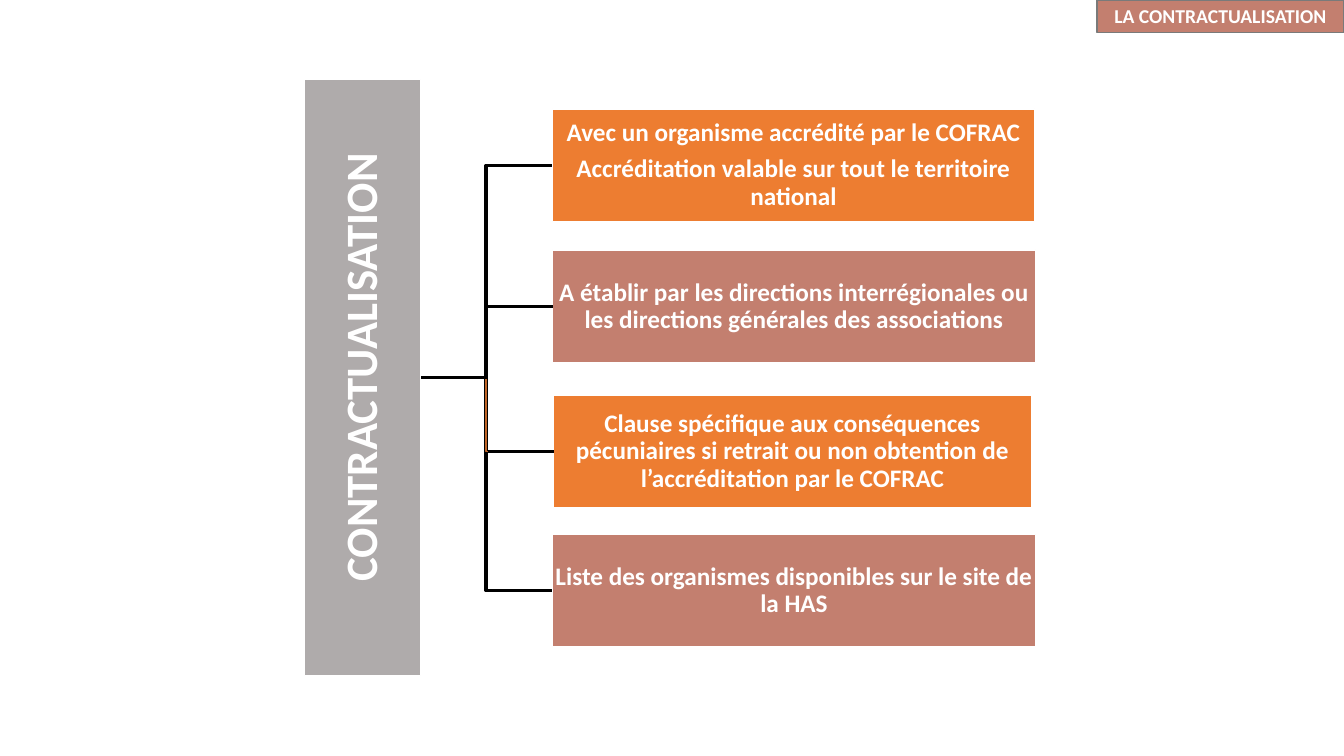
from dataclasses import dataclass

from lxml import etree
from pptx import Presentation
from pptx import util as u
from pptx.dml.color import RGBColor
from pptx.enum import shapes, text
from pptx.oxml.ns import qn


@dataclass(frozen=True)
class Theme:
    font: str = "Calibri"
    white: str = "FFFFFF"
    black: str = "000000"
    grey: str = "AFABAB"
    orange: str = "ED7D31"
    rust: str = "BE6427"
    rose: str = "C37F6F"
    border: str = "7A7A7A"
    tag_size: int = 14
    clause_size: int = 18
    stem_size: int = 32
    thin: float = 1
    thick: float = 2.25


THEME = Theme()
STEM_BOX = (3.02, 0.79, 1.15, 5.91)
TAG_BOX = (10.88, 0, 2.45, 0.32)
CLAUSE_HEIGHT = 1.12
FORK_X = 4.82

# left, top, width, fill, branch colour, branch weight, paragraphs
CLAUSES = [
    (5.48, 1.08, 4.78, THEME.orange, THEME.black, THEME.thick,
     ["Avec un organisme accrédité par le COFRAC",
      "Accréditation valable sur tout le territoire national"]),
    (5.48, 2.48, 4.79, THEME.rose, THEME.rust, THEME.thin,
     ["A établir par les directions interrégionales ou les directions "
      "générales des associations"]),
    (5.49, 3.92, 4.74, THEME.orange, THEME.rust, THEME.thin,
     ["Clause spécifique aux conséquences pécuniaires si retrait ou non "
      "obtention de l’accréditation par le COFRAC"]),
    (5.48, 5.3, 4.79, THEME.rose, THEME.black, THEME.thick,
     ["Liste des organismes disponibles sur le site de la HAS"]),
]


def paint(block, fill, line):
    block.fill.solid()
    block.fill.fore_color.rgb = RGBColor.from_string(fill)
    stroke(block.line, line, THEME.thin)


def stroke(line, color, weight):
    line.color.rgb = RGBColor.from_string(color)
    line.width = u.Pt(weight)


def write(block, paragraphs, size, inset, spacing=0.9, after=0.35):
    """Centre bold white paragraphs; after is a share of the type size."""
    frame = block.text_frame
    frame.text = "\n".join(paragraphs)
    frame.word_wrap = True
    frame.auto_size = text.MSO_AUTO_SIZE.NONE
    frame.vertical_anchor = text.MSO_ANCHOR.MIDDLE
    frame.margin_left = frame.margin_right = u.Inches(inset)
    frame.margin_top = frame.margin_bottom = u.Inches(inset)
    for paragraph in frame.paragraphs:
        paragraph.alignment = text.PP_ALIGN.CENTER
        paragraph.line_spacing = spacing
        paragraph.space_before = u.Pt(0)
        paragraph.space_after = u.Pt(size * after)
        for run in paragraph.runs:
            run.font.name = THEME.font
            run.font.size = u.Pt(size)
            run.font.bold = True
            run.font.color.rgb = RGBColor.from_string(THEME.white)


def add_block(slide, box, fill):
    block = slide.shapes.add_shape(shapes.MSO_SHAPE.RECTANGLE,
                                   *map(u.Inches, box))
    block.shadow.inherit = False
    paint(block, fill, THEME.white)
    return block


def add_tag(slide, box):
    tag = slide.shapes.title
    tag.left, tag.top, tag.width, tag.height = map(u.Inches, box)
    paint(tag, THEME.rose, THEME.border)
    write(tag, ["LA CONTRACTUALISATION"], THEME.tag_size, 0.05, 1, 0)


def add_stem(slide, box):
    """Fill the upright box with a bar turned to read from bottom to top."""
    left, top, width, height = box
    shift = (height - width) / 2
    stem = add_block(slide, (left - shift, top + shift, height, width),
                     THEME.grey)
    stem.rotation = 270
    write(stem, ["CONTRACTUALISATION"], THEME.stem_size, 0.02)
    stem.text_frame.margin_left = u.Inches(0.22)


def add_branch(slide, start, end, color, weight):
    (start_x, start_y), (end_x, end_y) = start, end
    outline = slide.shapes.build_freeform(u.Inches(start_x),
                                          u.Inches(start_y))
    bends = [(FORK_X, start_y), (FORK_X, end_y), (end_x, end_y)]
    outline.add_line_segments(
        [(u.Inches(x), u.Inches(y)) for x, y in bends], close=False)
    branch = outline.convert_to_shape()
    branch.shadow.inherit = False
    branch.fill.background()
    stroke(branch.line, color, weight)


def add_twig(slide, clause):
    """Join the fork to the middle of the clause's left side."""
    middle = clause.top + clause.height // 2
    twig = slide.shapes.add_connector(shapes.MSO_CONNECTOR.STRAIGHT,
                                      u.Inches(FORK_X + 0.02), middle,
                                      clause.left, middle)
    twig.end_connect(clause, 1)
    stroke(twig.line, THEME.black, THEME.thick)
    etree.SubElement(twig._element.spPr, qn("a:effectLst"))


def add_tree(slide, stem_box):
    left, top, width, height = stem_box
    root = (left + width, top + height / 2)
    for x, y, _, _, color, weight, _ in reversed(CLAUSES):
        add_branch(slide, root, (x, y + CLAUSE_HEIGHT / 2), color, weight)
    add_stem(slide, stem_box)
    clauses = []
    for x, y, wide, fill, _, _, paragraphs in CLAUSES:
        clause = add_block(slide, (x, y, wide, CLAUSE_HEIGHT), fill)
        write(clause, paragraphs, THEME.clause_size, 0.01)
        clauses.append(clause)
    for clause in clauses[1:3]:
        add_twig(slide, clause)


def main():
    deck = Presentation()
    deck.slide_width, deck.slide_height = u.Inches(13.33), u.Inches(7.5)
    slide = deck.slides.add_slide(deck.slide_layouts[5])
    add_tag(slide, TAG_BOX)
    add_tree(slide, STEM_BOX)
    deck.save("out.pptx")


if __name__ == "__main__":
    main()
